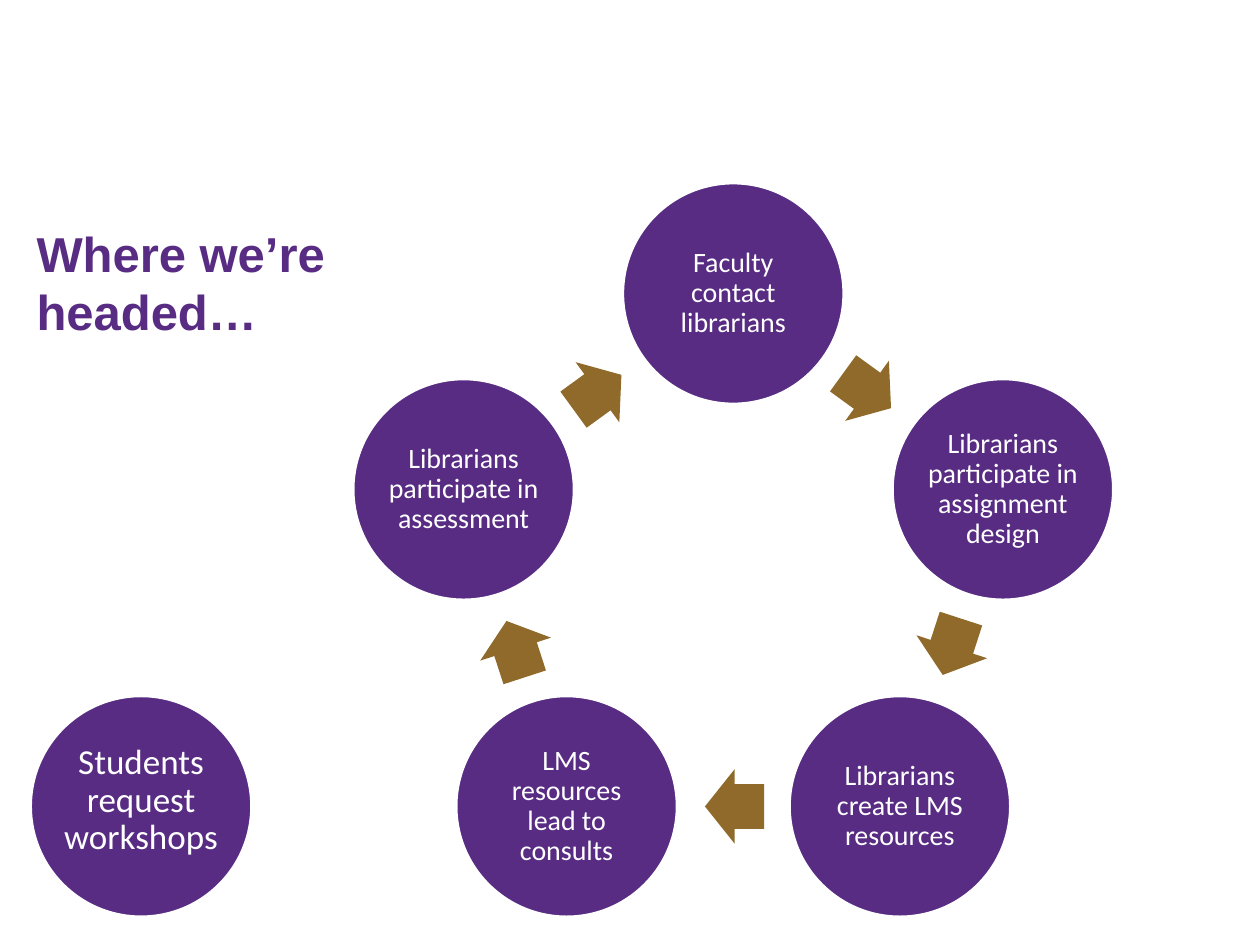
from math import cos, radians, sin

from pptx import Presentation
from pptx.dml.color import RGBColor
from pptx.enum.shapes import MSO_SHAPE
from pptx.enum.text import MSO_ANCHOR, PP_ALIGN
from pptx.util import Inches, Pt

COLORS = {"purple": "582C83", "gold": "8F6A2A", "white": "FFFFFF"}
TITLE_ONLY = 5
CENTER_X, CENTER_Y, RADIUS = 5.82, 4.58, 2.25
CIRCLE_SIZE = 1.76
ARROW_WIDTH, ARROW_HEIGHT = 0.47, 0.59
ARROW_SETBACK = 0.01
STEPS = [
    "Faculty contact librarians",
    "Librarians participate in assignment design",
    "Librarians create LMS resources",
    "LMS resources lead to consults",
    "Librarians participate in assessment",
]


class CycleSlide:
    def __init__(self, deck):
        self.slide = deck.slides.add_slide(deck.slide_layouts[TITLE_ONLY])

    def color(self, name):
        return RGBColor.from_string(COLORS[name])

    def add_run(self, para, text, font, size, color, bold=False):
        span = para.add_run()
        span.text = text
        span.font.name = font
        span.font.size = Pt(size)
        span.font.bold = bold
        span.font.color.rgb = self.color(color)

    def title(self, lines, left, top, width, height):
        box = self.slide.shapes.title
        box.left, box.top = Inches(left), Inches(top)
        box.width, box.height = Inches(width), Inches(height)
        frame = box.text_frame
        frame.word_wrap = False
        frame.vertical_anchor = MSO_ANCHOR.TOP
        for index, line in enumerate(lines):
            para = frame.add_paragraph() if index else frame.paragraphs[0]
            para.alignment = PP_ALIGN.LEFT
            para.space_before = Pt(0)
            self.add_run(para, line, "Arial", 28, "purple", bold=True)

    def shape(self, kind, center_x, center_y, width, height, fill):
        """Add a filled preset shape around its centre point."""
        shape = self.slide.shapes.add_shape(
            kind, Inches(center_x - width / 2), Inches(center_y - height / 2),
            Inches(width), Inches(height))
        shape.shadow.inherit = False
        shape.fill.solid()
        shape.fill.fore_color.rgb = self.color(fill)
        return shape

    def circle(self, text, center_x, center_y, size=16, side=0.02, bottom=0.02):
        """Add a labelled circle; side and bottom are text margins."""
        circle = self.shape(MSO_SHAPE.OVAL, center_x, center_y,
                            CIRCLE_SIZE, CIRCLE_SIZE, "purple")
        circle.line.color.rgb = self.color("white")
        circle.line.width = Pt(2)
        frame = circle.text_frame
        frame.word_wrap = True
        frame.vertical_anchor = MSO_ANCHOR.MIDDLE
        frame.margin_left = frame.margin_right = Inches(side)
        frame.margin_top, frame.margin_bottom = Inches(0.02), Inches(bottom)
        para = frame.paragraphs[0]
        para.alignment = PP_ALIGN.CENTER
        para.line_spacing = 0.9
        self.add_run(para, text, "Calibri", size, "white")

    def arrow(self, center_x, center_y, rotation):
        arrow = self.shape(MSO_SHAPE.RIGHT_ARROW, center_x, center_y,
                           ARROW_WIDTH, ARROW_HEIGHT, "gold")
        arrow.adjustments[0], arrow.adjustments[1] = 0.6, 0.5
        arrow.line.fill.background()
        arrow.rotation = rotation

    def cycle(self, steps):
        """Place the steps clockwise from the top, with an arrow after each."""
        turn = 360 / len(steps)
        arrow_radius = RADIUS * cos(radians(turn / 2))
        for index, step in enumerate(steps):
            angle = radians(index * turn)
            self.circle(step, CENTER_X + RADIUS * sin(angle),
                        CENTER_Y - RADIUS * cos(angle))
            rotation = (index + 0.5) * turn
            middle = radians(rotation)
            self.arrow(
                CENTER_X + arrow_radius * sin(middle) - ARROW_SETBACK * cos(middle),
                CENTER_Y - arrow_radius * cos(middle) - ARROW_SETBACK * sin(middle),
                rotation)


def main():
    deck = Presentation()
    deck.slide_width, deck.slide_height = Inches(10), Inches(7.5)
    page = CycleSlide(deck)
    page.title(["Where we’re", "headed…"], 0.19, 1.72, 2.62, 1.04)
    page.cycle(STEPS)
    page.circle("Students request workshops", 1.12, 6.4,
                size=20, side=0, bottom=0.11)
    deck.save("out.pptx")


if __name__ == "__main__":
    main()
